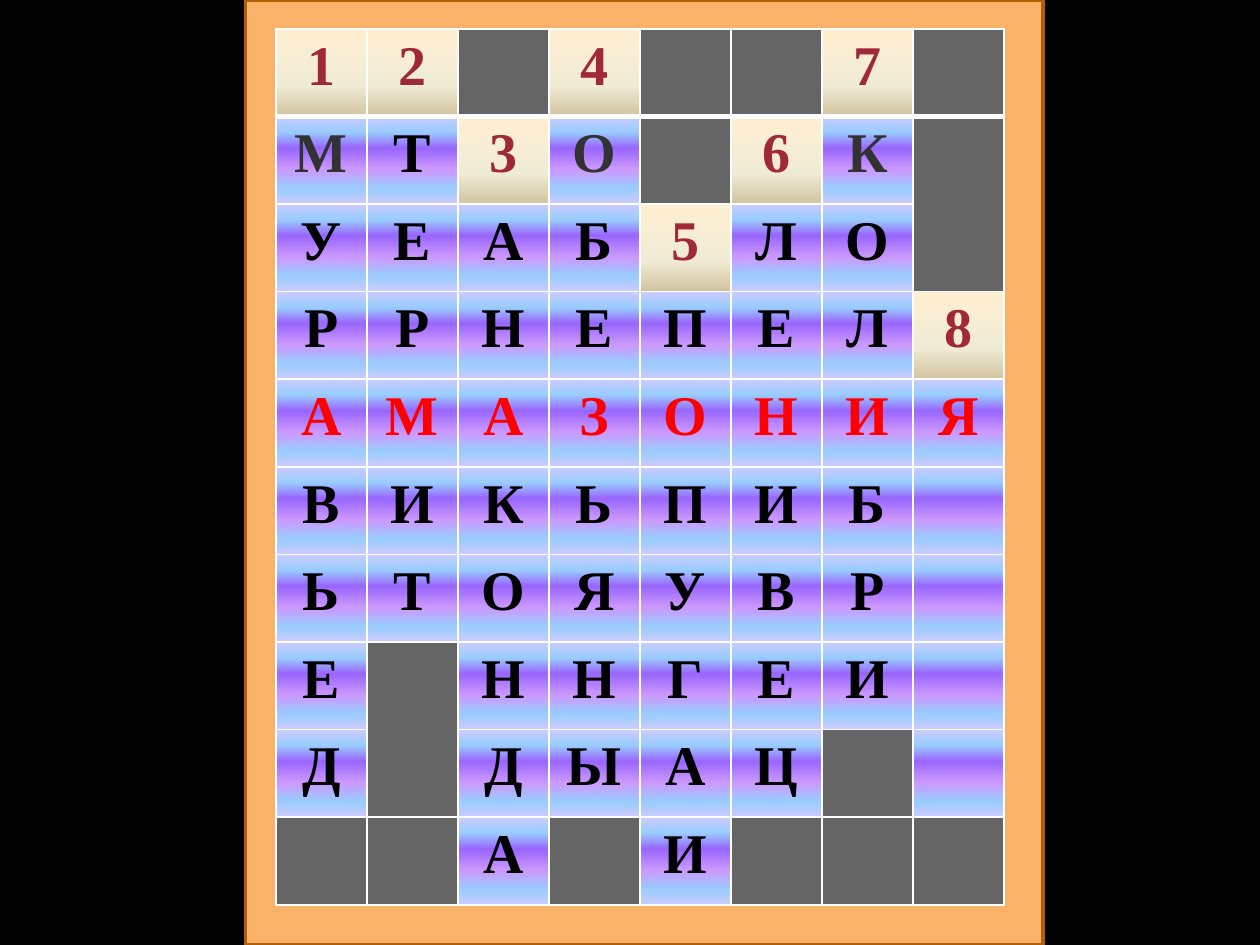
"""Build a crossword slide with a framed letter grid."""
from lxml import etree
from pptx import Presentation
from pptx.dml.color import RGBColor
from pptx.enum import shapes, text
from pptx.oxml import ns
from pptx.util import Cm, Pt

BLACK = RGBColor(0x00, 0x00, 0x00)
WHITE = RGBColor(0xFF, 0xFF, 0xFF)
PEACH = RGBColor(0xF9, 0xB2, 0x68)
BROWN = RGBColor(0xB2, 0x5E, 0x07)
GREY = RGBColor(0x65, 0x65, 0x65)
DARK = RGBColor(0x32, 0x32, 0x32)
WINE = RGBColor(0x9F, 0x29, 0x36)
RED = RGBColor(0xFF, 0x00, 0x00)
CREAM = RGBColor(0xFF, 0xEF, 0xD1)
IVORY = RGBColor(0xF0, 0xEB, 0xD5)
SAND = RGBColor(0xD1, 0xC3, 0x9F)
LILAC = RGBColor(0xCC, 0xCC, 0xFF)
SKY = RGBColor(0x99, 0xCC, 0xFF)
VIOLET = RGBColor(0x99, 0x66, 0xFF)
MAUVE = RGBColor(0xCC, 0x99, 0xFF)

CLUE = [(0, CREAM), (65, IVORY), (100, SAND)]
FIELD = [(0, LILAC), (18, SKY), (36, VIOLET), (61, MAUVE), (82, SKY), (100, LILAC)]

BLOCK, EMPTY = "#", "."
GRID = [
    "12#4##7#",
    "МТ3О#6К#",
    "УЕАБ5ЛО#",
    "РРНЕПЕЛ8",
    "АМАЗОНИЯ",
    "ВИКЬПИБ.",
    "ЬТОЯУВР.",
    "Е#ННГЕИ.",
    "Д#ДЫАЦ#.",
    "##А#И###",
]
KEY = 4
DIM = {(1, 0), (1, 3), (1, 6)}
TALL = [(1, 7), (7, 1)]


def add_node(parent, tag, **attrs):
    """Append a drawing element and return it."""
    return etree.SubElement(parent, ns.qn(tag), {k: str(v) for k, v in attrs.items()})


def add_rule(props, side, width):
    """Draw one white border of a cell."""
    line = add_node(props, f"a:ln{side}", w=Pt(width))
    add_node(add_node(line, "a:solidFill"), "a:srgbClr", val=WHITE)


def add_blend(props, stops):
    """Fill a cell with a downward gradient."""
    blend = add_node(props, "a:gradFill", rotWithShape=1)
    group = add_node(blend, "a:gsLst")
    for place, color in stops:
        stop = add_node(group, "a:gs", pos=place * 1000)
        add_node(stop, "a:srgbClr", val=color)
    add_node(blend, "a:lin", ang=90 * 60000, scaled=0)


def pick_ink(row, col, mark):
    """Choose the text colour of a cell."""
    if mark.isdigit():
        return WINE
    if row == KEY:
        return RED
    return DARK if (row, col) in DIM else BLACK


def add_mark(cell, mark, ink):
    """Write one letter or number in a cell."""
    para = cell.text_frame.paragraphs[0]
    para.alignment = text.PP_ALIGN.CENTER
    run = para.add_run()
    run.text = mark
    font = run.font
    font.name, font.size, font.bold = "Times New Roman", Pt(32), True
    font.color.rgb = ink


def fill_cell(cell, row, col, mark):
    """Give a cell its borders, fill and mark."""
    props = cell._tc.get_or_add_tcPr()
    rules = {"L": 1, "R": 1, "T": 3 if row == 1 else 1, "B": 3 if row == 0 else 1}
    for side, width in rules.items():
        add_rule(props, side, width)
    if mark == BLOCK:
        cell.fill.solid()
        cell.fill.fore_color.rgb = GREY
        return
    add_blend(props, CLUE if mark.isdigit() else FIELD)
    if mark != EMPTY:
        add_mark(cell, mark, pick_ink(row, col, mark))


def add_frame(slide):
    """Draw the panel behind the grid."""
    frame = slide.shapes.add_shape(
        shapes.MSO_SHAPE.FLOWCHART_PROCESS, Cm(4.95), 0, Cm(16.08), Cm(19.05))
    frame.shadow.inherit = False
    frame.fill.solid()
    frame.fill.fore_color.rgb = PEACH
    frame.line.color.rgb = BROWN
    frame.line.width = Pt(2)


def add_grid(slide):
    """Build the crossword table."""
    rows, cols = len(GRID), len(GRID[0])
    table = slide.shapes.add_table(
        rows, cols, Cm(5.56), Cm(0.58), Cm(14.68), Cm(17.66)).table
    table.first_row = table.horz_banding = False
    for row, marks in enumerate(GRID):
        for col, mark in enumerate(marks):
            fill_cell(table.cell(row, col), row, col, mark)
    for row, col in TALL:
        table.cell(row, col).merge(table.cell(row + 1, col))


def main():
    """Create and save the slide."""
    deck = Presentation()
    deck.slide_width, deck.slide_height = Cm(25.4), Cm(19.05)
    slide = deck.slides.add_slide(deck.slide_layouts[6])
    back = slide.background.fill
    back.solid()
    back.fore_color.rgb = BLACK
    add_frame(slide)
    add_grid(slide)
    deck.save("out.pptx")


if __name__ == "__main__":
    main()
